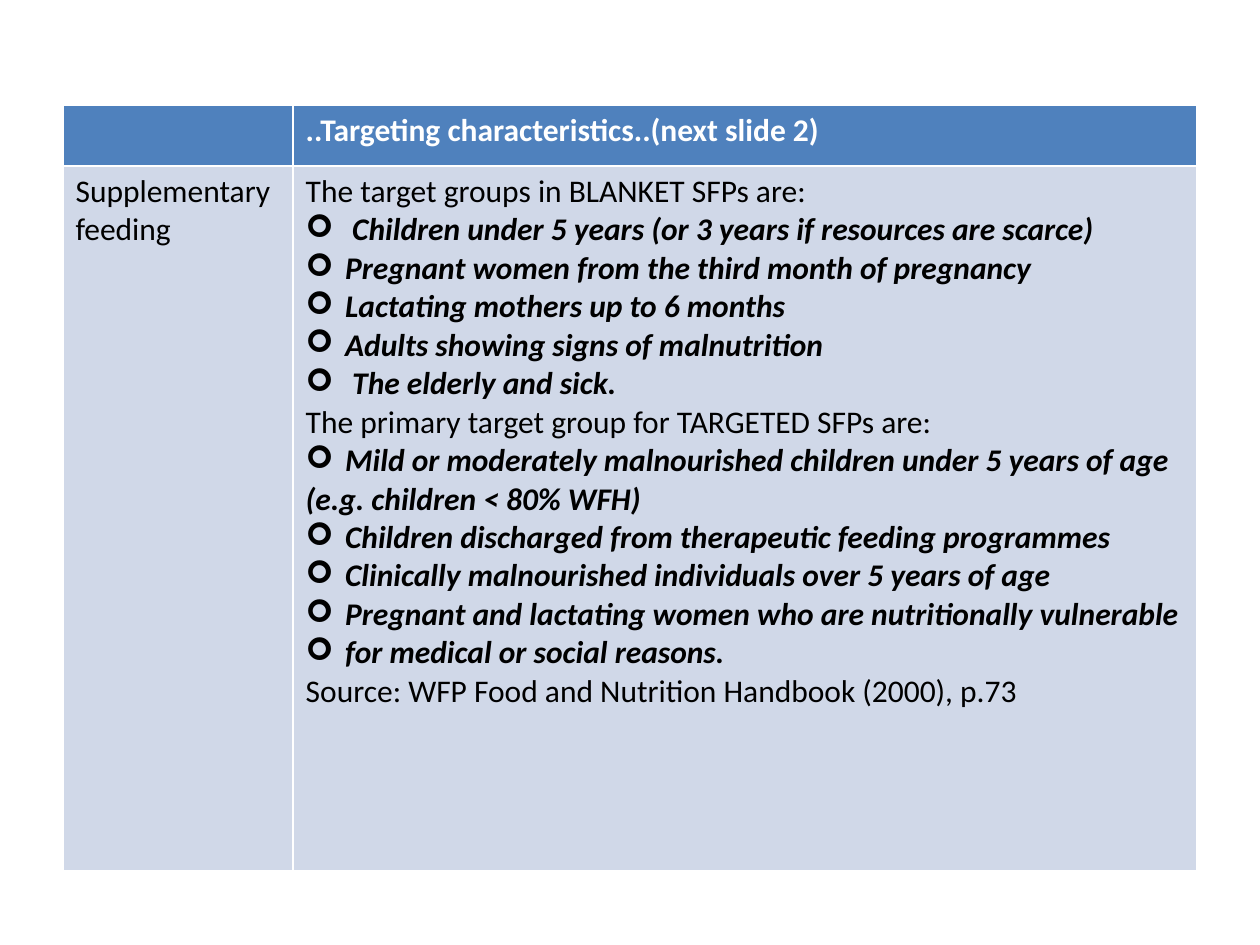
from pptx import Presentation
from pptx.dml.color import RGBColor
from pptx.util import Pt
from lxml.etree import SubElement
from pptx.oxml.ns import qn

THEME = {
    "font": "Calibri",
    "size": Pt(18),
    "header": RGBColor.from_string("4F81BD"),
    "body": RGBColor.from_string("D0D8E8"),
    "light": RGBColor.from_string("FFFFFF"),
    "dark": RGBColor.from_string("000000"),
}
PLAIN, BULLET, EMPHASIS = "plain", "bullet", "emphasis"
HEADING = [(PLAIN, "..Targeting characteristics..(next slide 2)")]
PROGRAMME = [(PLAIN, "Supplementary"), (PLAIN, "feeding")]
TARGET_GROUPS = [
    (PLAIN, "The target groups in BLANKET SFPs are:"),
    (BULLET, " Children under 5 years (or 3 years if resources are scarce)"),
    (BULLET, "Pregnant women from the third month of pregnancy"),
    (BULLET, "Lactating mothers up to 6 months"),
    (BULLET, "Adults showing signs of malnutrition"),
    (BULLET, " The elderly and sick."),
    (PLAIN, "The primary target group for TARGETED SFPs are:"),
    (BULLET, "Mild or moderately malnourished children under 5 years of age"),
    (EMPHASIS, "(e.g. children < 80% WFH)"),
    (BULLET, "Children discharged from therapeutic feeding programmes"),
    (BULLET, "Clinically malnourished individuals over 5 years of age"),
    (BULLET, "Pregnant and lactating women who are nutritionally vulnerable"),
    (BULLET, "for medical or social reasons."),
    (PLAIN, "Source: WFP Food and Nutrition Handbook (2000), p.73"),
]


def add_arrow_bullet(p):
    pPr = p._p.get_or_add_pPr()
    pPr.set("marL", str(Pt(22.5)))
    pPr.set("indent", str(Pt(-22.5)))
    SubElement(pPr, qn("a:buFont"), typeface="Wingdings")
    SubElement(pPr, qn("a:buChar"), char="➢")


prs = Presentation()
prs.slide_width, prs.slide_height = Pt(720), Pt(540)
s = prs.slides.add_slide(prs.slide_layouts[6])

# The default table style supplies the white cell borders
table = s.shapes.add_table(2, 2, Pt(36), Pt(60), Pt(648), Pt(437.5)).table
for column, width in zip(table.columns, (131.5, 516.5)):
    column.width = Pt(width)
for row, height in zip(table.rows, (35, 402.5)):
    row.height = Pt(height)

rows = [
    (THEME["header"], THEME["light"], ([], HEADING)),
    (THEME["body"], THEME["dark"], (PROGRAMME, TARGET_GROUPS)),
]
for row, (fill, color, contents) in enumerate(rows):
    for column, lines in enumerate(contents):
        cell = table.cell(row, column)
        cell.fill.solid()
        cell.fill.fore_color.rgb = fill
        tf = cell.text_frame
        tf.text = "\n".join(text for style, text in lines)
        for p, (style, text) in zip(tf.paragraphs, lines):
            if style == BULLET:
                add_arrow_bullet(p)
            font = p.runs[0].font
            font.name, font.size = THEME["font"], THEME["size"]
            font.color.rgb = color
            font.bold = row == 0 or style != PLAIN
            font.italic = style != PLAIN

prs.save("out.pptx")
